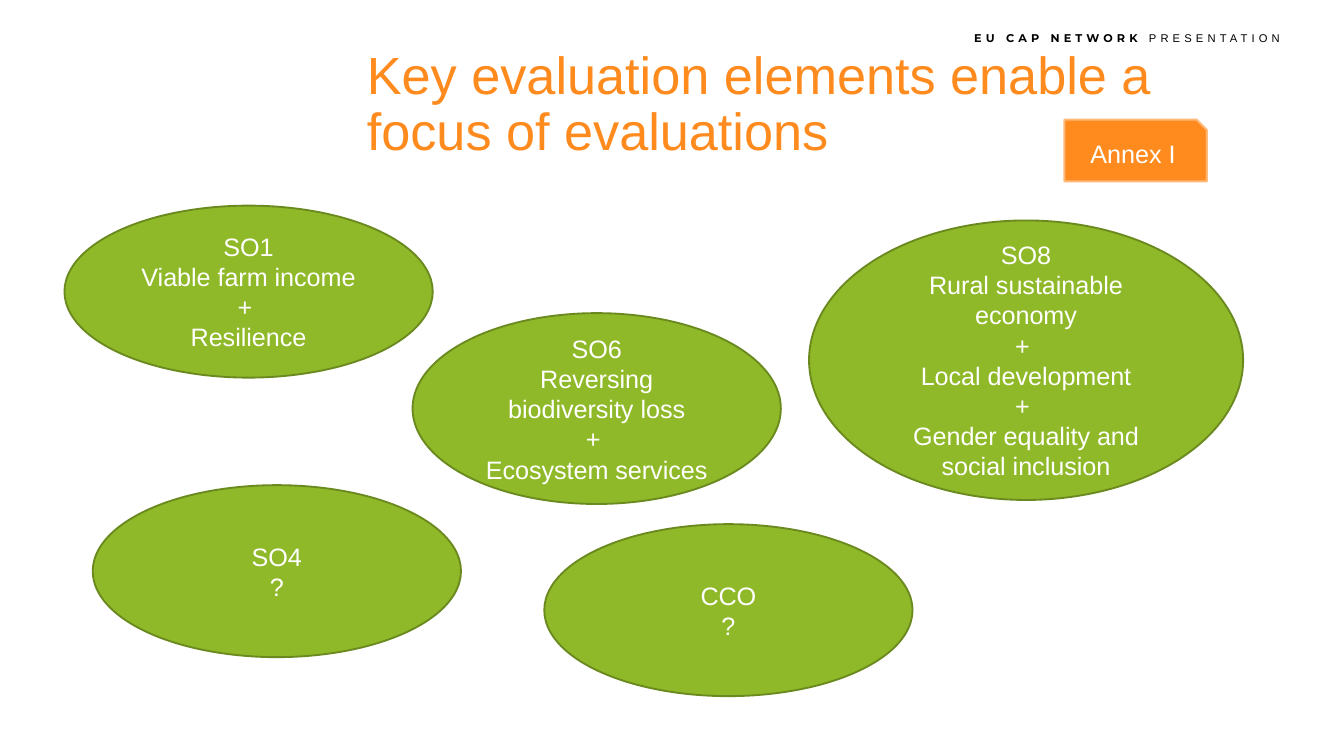
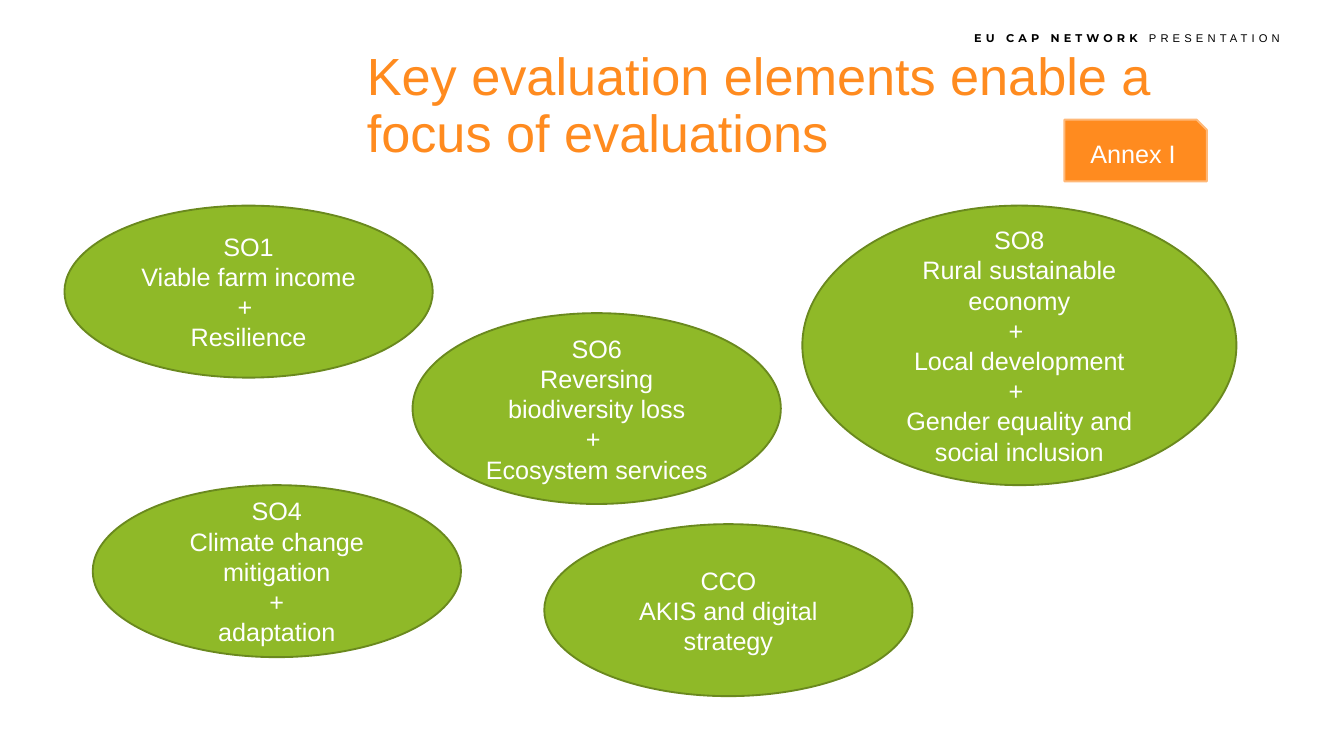
from dataclasses import dataclass

from pptx import Presentation
from pptx.dml.color import RGBColor as Rgb
from pptx.enum.shapes import MSO_SHAPE as Kind
from pptx.enum.text import MSO_ANCHOR as Anchor, MSO_AUTO_SIZE as Fit, PP_ALIGN as Align
from pptx.util import Inches, Pt


@dataclass(frozen=True)
class Theme:
    """Colours, fonts and type sizes of the deck."""
    orange: str = "FF8B1F"
    peach: str = "FFB979"
    green: str = "8FB928"
    moss: str = "6A891E"
    white: str = "FFFFFF"
    black: str = "000000"
    font: str = "Arial"
    brand: str = "Montserrat"
    title: float = 28
    body: float = 13.5
    small: float = 6
    track: int = 220


THEME = Theme()
WIDTH = Inches(10)
TITLE = "Key evaluation elements enable a focus of evaluations"
FRAME = dict(
    word_wrap=True,
    auto_size=Fit.NONE,
    vertical_anchor=Anchor.MIDDLE,
    margin_left=Inches(0.1),
    margin_right=Inches(0.1),
    margin_top=Inches(0.04),
    margin_bottom=Inches(0.04),
)

OVAL = (2.74, 1.28)
PLACES = {
    "SO1": (0.48, 1.53, *OVAL),
    "SO6": (3.07, 2.33, 2.74, 1.42),
    "SO8": (6.02, 1.64, 3.23, 2.08),
    "SO4": (0.69, 3.61, *OVAL),
    "CCO": (4.05, 3.9, *OVAL),
}
GOALS = {
    "SO1": ["Viable farm income", "+ ", "Resilience"],
    "SO6": ["Reversing biodiversity loss", "+ ", "Ecosystem services"],
    "SO8": ["Rural sustainable economy", "+ ", "Local development", "+ ",
            "Gender equality and social inclusion"],
    "SO4": ["?"],
    "CCO": ["?"],
}
ANSWERS = {
    "SO4": ["Climate change mitigation", "+", "adaptation"],
    "CCO": ["AKIS and digital strategy"],
}


def apply(item, form):
    """Set each attribute named in a dict of format values."""
    for name, value in form.items():
        setattr(item, name, value)


def place(shape, box):
    """Move and size a shape by a box in inches."""
    apply(shape, dict(zip(("left", "top", "width", "height"), map(Inches, box))))


def style(font, size, color, name=THEME.font, bold=False):
    """Give a font its face, size and colour."""
    apply(font, dict(name=name, size=Pt(size), bold=bold))
    font.color.rgb = Rgb.from_string(color)


def add_head(slide):
    """Add the running head at the top right."""
    box = slide.shapes.add_textbox(*map(Inches, (5.04, 0.19, 4.58, 0.2)))
    frame = box.text_frame
    apply(frame, FRAME | dict(auto_size=Fit.SHAPE_TO_FIT_TEXT, vertical_anchor=Anchor.TOP))
    para = frame.paragraphs[0]
    para.alignment = Align.RIGHT
    parts = [("EU CAP NETWORK ", THEME.brand, True), ("PRESENTATION", THEME.font, False)]
    for text, face, bold in parts:
        run = para.add_run()
        run.text = text
        style(run.font, THEME.small, THEME.black, face, bold)
        run.font._element.set("spc", str(THEME.track))


def add_title(slide, box):
    """Fill and place the slide title."""
    title = slide.shapes.title
    place(title, box)
    apply(title.text_frame, FRAME | dict(text=TITLE))
    para = title.text_frame.paragraphs[0]
    apply(para, dict(alignment=Align.LEFT, line_spacing=0.9))
    style(para.runs[0].font, THEME.title, THEME.orange)


def add_label(slide, kind, box, lines, fill, edge):
    """Add a filled shape with centred white lines."""
    shape = slide.shapes.add_shape(kind, *map(Inches, box))
    shape.shadow.inherit = False
    shape.fill.solid()
    shape.fill.fore_color.rgb = Rgb.from_string(fill)
    shape.line.color.rgb = Rgb.from_string(edge)
    shape.line.width = Pt(1)
    apply(shape.text_frame, FRAME | dict(text="\n".join(lines)))
    for para in shape.text_frame.paragraphs:
        para.alignment = Align.CENTER
        style(para.runs[0].font, THEME.body, THEME.white)


def add_page(deck, box, goals, places):
    """Add one slide of evaluation goals."""
    slide = deck.slides.add_slide(deck.slide_layouts[5])
    add_head(slide)
    add_title(slide, box)
    add_label(slide, Kind.SNIP_1_RECTANGLE, (7.92, 0.89, 1.06, 0.46), ["Annex I"],
              THEME.orange, THEME.peach)
    for code, lines in goals.items():
        add_label(slide, Kind.OVAL, places[code], [code, *lines], THEME.green, THEME.moss)


def main():
    """Build and save the deck."""
    deck = Presentation()
    apply(deck, dict(slide_width=WIDTH, slide_height=WIDTH * 9 // 16))
    add_page(deck, (2.63, 0.29, 6.07, 0.99), GOALS, PLACES)
    add_page(deck, (2.63, 0.3, 6.84, 0.99), GOALS | ANSWERS,
             PLACES | {"SO8": (5.97, 1.53, 3.23, 2.08)})
    deck.save("out.pptx")


if __name__ == "__main__":
    main()
